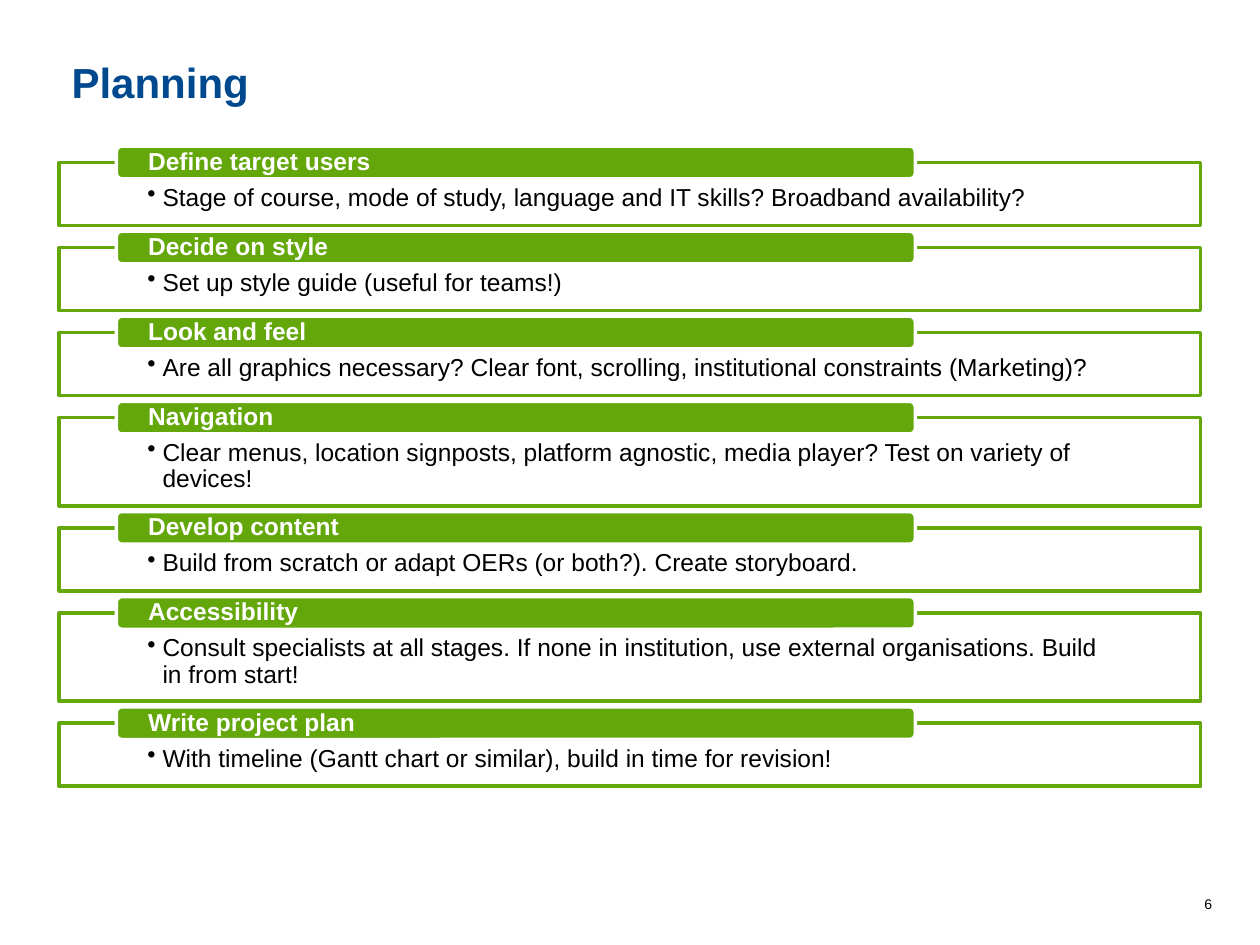
from collections import namedtuple
from dataclasses import dataclass

from lxml import etree
from pptx import Presentation
from pptx.dml.color import RGBColor
from pptx.enum.shapes import MSO_SHAPE
from pptx.enum.text import MSO_ANCHOR, PP_ALIGN
from pptx.oxml.ns import qn
from pptx.util import Inches, Pt

RECTANGLE, ROUNDED = MSO_SHAPE.RECTANGLE, MSO_SHAPE.ROUNDED_RECTANGLE
TOP, MIDDLE = MSO_ANCHOR.TOP, MSO_ANCHOR.MIDDLE
LEFT, RIGHT = PP_ALIGN.LEFT, PP_ALIGN.RIGHT

Box = namedtuple("Box", "left top width height")


@dataclass(frozen=True)
class Theme:
    font: str = "Arial"
    blue: RGBColor = RGBColor(0x01, 0x49, 0x8E)
    green: RGBColor = RGBColor(0x64, 0xA7, 0x0B)
    white: RGBColor = RGBColor(0xFF, 0xFF, 0xFF)
    black: RGBColor = RGBColor(0x00, 0x00, 0x00)
    title_size: int = 24
    text_size: int = 14
    number_size: int = 8
    line_width: int = 2


THEME = Theme()
CELL = Inches(0.1)

NUMBER_BOX = Box(53.9, 70.6, 43.3, 2.4)
TITLE_BOX = Box(4.7, 4, 90.6, 5.9)
LIST_BOX = Box(4.7, 12.9, 90.6, 49.5)

LINE_HEIGHT = 2
SECTION_PADDING = 3
TAG_HEIGHT = 2.6
TAG_INDENT, TAG_SHARE = 0.05, 0.7
HANGING = 1.2

SECTIONS = [
    ("Define target users", "Stage of course, mode of study, language and IT skills? Broadband availability?", 1),
    ("Decide on style", "Set up style guide (useful for teams!)", 1),
    ("Look and feel", "Are all graphics necessary? Clear font, scrolling, institutional constraints (Marketing)?", 1),
    ("Navigation", "Clear menus, location signposts, platform agnostic, media player? Test on variety of devices!", 2),
    ("Develop content", "Build from scratch or adapt OERs (or both?). Create storyboard.", 1),
    ("Accessibility", "Consult specialists at all stages. If none in institution, use external organisations. Build in from start!", 2),
    ("Write project plan", "With timeline (Gantt chart or similar), build in time for revision!", 1),
]


def cells(count):
    return round(count * CELL)


def set_all(target, values):
    for name, value in values.items():
        setattr(target, name, value)


def add_bullet(para):
    properties = para._p.get_or_add_pPr()
    properties.set("marL", str(cells(HANGING)))
    properties.set("indent", str(-cells(HANGING)))
    etree.SubElement(properties, qn("a:buChar")).set("char", "•")


def write(shape, text, size, color, bold=False, align=LEFT, anchor=TOP,
          insets=(1, 0.5, 1, 0.5), spacing=1.0, bullet=False):
    frame = shape.text_frame
    sides = ("margin_left", "margin_top", "margin_right", "margin_bottom")
    set_all(frame, {"word_wrap": True, "vertical_anchor": anchor})
    set_all(frame, dict(zip(sides, map(cells, insets))))
    para = frame.paragraphs[0]
    set_all(para, {"alignment": align, "line_spacing": spacing})
    if bullet:
        add_bullet(para)
    span = para.add_run()
    span.text = text
    for font in (para.font, span.font):
        set_all(font, {"name": THEME.font, "size": Pt(size), "bold": bold})
        font.color.rgb = color


def add_label(page, box, text, **style):
    write(page.shapes.add_textbox(*map(cells, box)), text, **style)


def add_panel(page, kind, box, fill, line):
    panel = page.shapes.add_shape(kind, *map(cells, box))
    panel.shadow.inherit = False
    panel.fill.solid()
    panel.fill.fore_color.rgb = fill
    panel.line.color.rgb = line
    panel.line.width = Pt(THEME.line_width)
    return panel


def add_section(page, box, heading, detail):
    body = add_panel(page, RECTANGLE, box, THEME.white, THEME.green)
    write(body, detail, THEME.text_size, THEME.black,
          insets=(7, 1.8, 7, 1.1), spacing=0.9, bullet=True)
    tag_box = Box(box.left + box.width * TAG_INDENT, box.top - TAG_HEIGHT / 2,
                  box.width * TAG_SHARE, TAG_HEIGHT)
    tag = add_panel(page, ROUNDED, tag_box, THEME.green, THEME.white)
    write(tag, heading, THEME.text_size, THEME.white, bold=True,
          anchor=MIDDLE, insets=(2.4, 0, 2.4, 0), spacing=0.9)


def add_section_list(page, box, sections):
    heights = [SECTION_PADDING + LINE_HEIGHT * lines for _, _, lines in sections]
    gap = (box.height - sum(heights)) / (len(sections) - 1)
    top = box.top
    for (heading, detail, _), height in zip(sections, heights):
        add_section(page, Box(box.left, top, box.width, height), heading, detail)
        top += height + gap


def main():
    deck = Presentation()
    set_all(deck, {"slide_width": cells(100), "slide_height": cells(75)})
    page = deck.slides.add_slide(deck.slide_layouts[6])
    add_label(page, NUMBER_BOX, "6", size=THEME.number_size, color=THEME.black, align=RIGHT)
    add_label(page, TITLE_BOX, "Planning", size=THEME.title_size, color=THEME.blue, bold=True)
    add_section_list(page, LIST_BOX, SECTIONS)
    deck.save("out.pptx")


if __name__ == "__main__":
    main()
